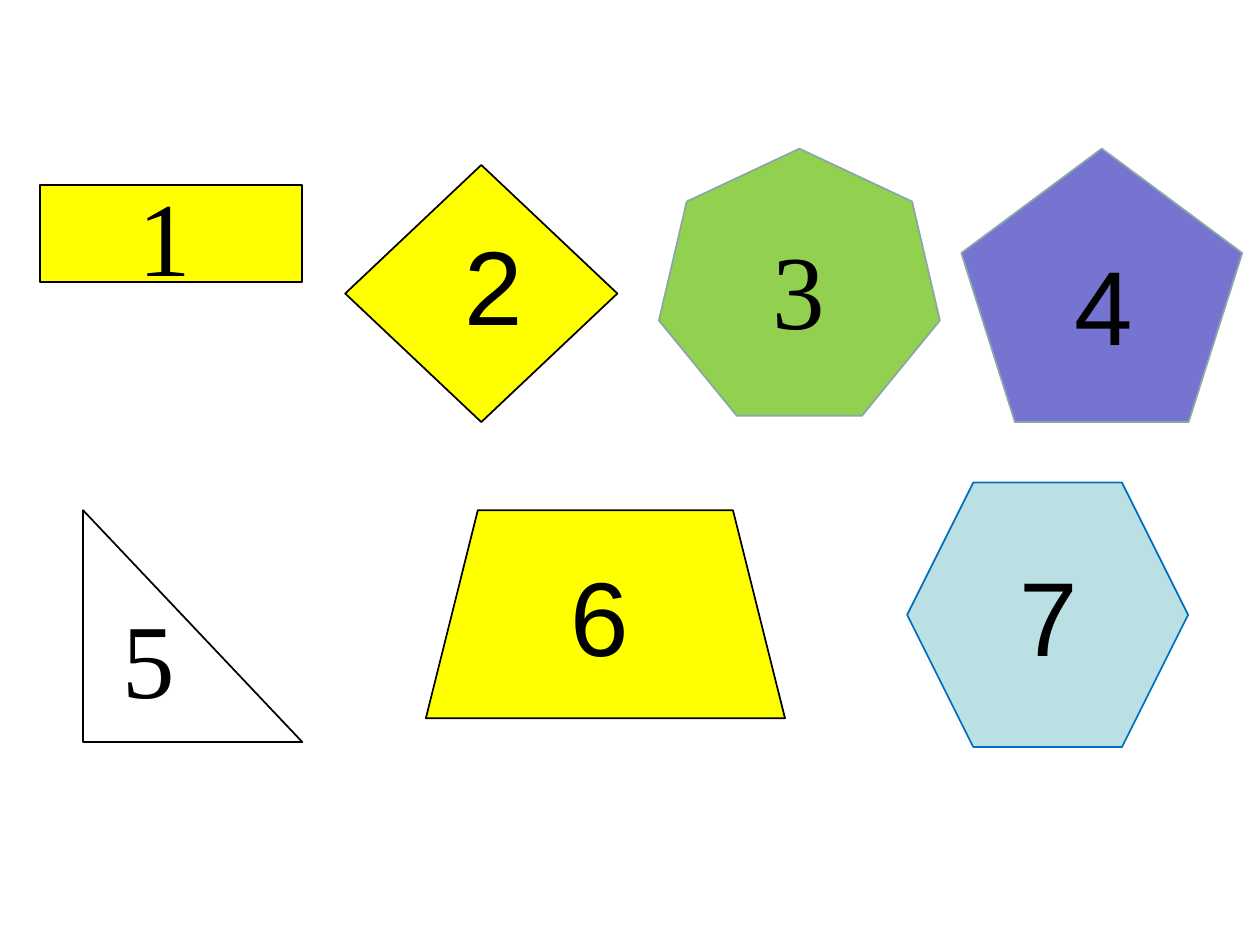
from dataclasses import dataclass

from pptx import Presentation
from pptx.dml.color import RGBColor
from pptx.enum import shapes, text
from pptx.util import Pt

COLORS = {
    "yellow": "FFFF00",
    "green": "92D050",
    "violet": "7575D1",
    "aqua": "BBE0E3",
    "white": "FFFFFF",
    "black": "000000",
    "gray": "8AA6A8",
    "blue": "0070C0",
}
SERIF, SANS = "Times New Roman", "Arial"
LABEL_W, LABEL_H, LABEL_SIZE = 109.44, 79.92, 60
KIND = shapes.MSO_SHAPE


@dataclass(frozen=True)
class Figure:
    kind: shapes.MSO_SHAPE
    x: float
    y: float
    w: float
    h: float
    fill: str
    line: str
    label_x: float
    label_y: float
    font: str


FIGURES = [
    Figure(KIND.RECTANGLE, 23.04, 105.84, 149.76, 55.44, "yellow", "black", 72, 94.32, SERIF),
    Figure(KIND.DIAMOND, 197.28, 94.32, 155.52, 146.88, "yellow", "black", 258.48, 122.4, SANS),
    Figure(KIND.HEPTAGON, 376.56, 84.96, 160.56, 152.64, "green", "gray", 434.16, 124.56, SERIF),
    Figure(KIND.REGULAR_PENTAGON, 549.36, 84.96, 160.56, 156.24, "violet", "gray", 606.96, 133.92, SANS),
    Figure(KIND.RIGHT_TRIANGLE, 47.52, 291.6, 125.28, 132.48, "white", "black", 62.64, 335.52, SERIF),
    Figure(KIND.TRAPEZOID, 243.36, 291.6, 205.2, 118.8, "yellow", "black", 318.96, 311.76, SANS),
    Figure(KIND.HEXAGON, 518.4, 275.76, 160.56, 151.2, "aqua", "blue", 575.28, 311.76, SANS),
]


def rgb(name: str) -> RGBColor:
    return RGBColor.from_string(COLORS[name])


def draw_figure(s, fig: Figure) -> None:
    sp = s.shapes.add_shape(fig.kind, Pt(fig.x), Pt(fig.y), Pt(fig.w), Pt(fig.h))
    sp.shadow.inherit = False
    sp.fill.solid()
    sp.fill.fore_color.rgb = rgb(fig.fill)
    sp.line.color.rgb = rgb(fig.line)
    sp.line.width = Pt(1)


def draw_label(s, fig: Figure, number: int) -> None:
    sp = s.shapes.add_textbox(Pt(fig.label_x), Pt(fig.label_y), Pt(LABEL_W), Pt(LABEL_H))
    tf = sp.text_frame
    tf.word_wrap = True
    tf.auto_size = text.MSO_AUTO_SIZE.SHAPE_TO_FIT_TEXT
    p = tf.paragraphs[0]
    r = p.add_run()
    r.text = str(number)
    r.font.name = fig.font
    r.font.size = Pt(LABEL_SIZE)
    r.font.color.rgb = rgb("black")


def main() -> None:
    prs = Presentation()
    prs.slide_width, prs.slide_height = Pt(720), Pt(540)
    s = prs.slides.add_slide(prs.slide_layouts[6])
    for fig in FIGURES:
        draw_figure(s, fig)
    for number, fig in enumerate(FIGURES, start=1):
        draw_label(s, fig, number)
    prs.save("out.pptx")


if __name__ == "__main__":
    main()
